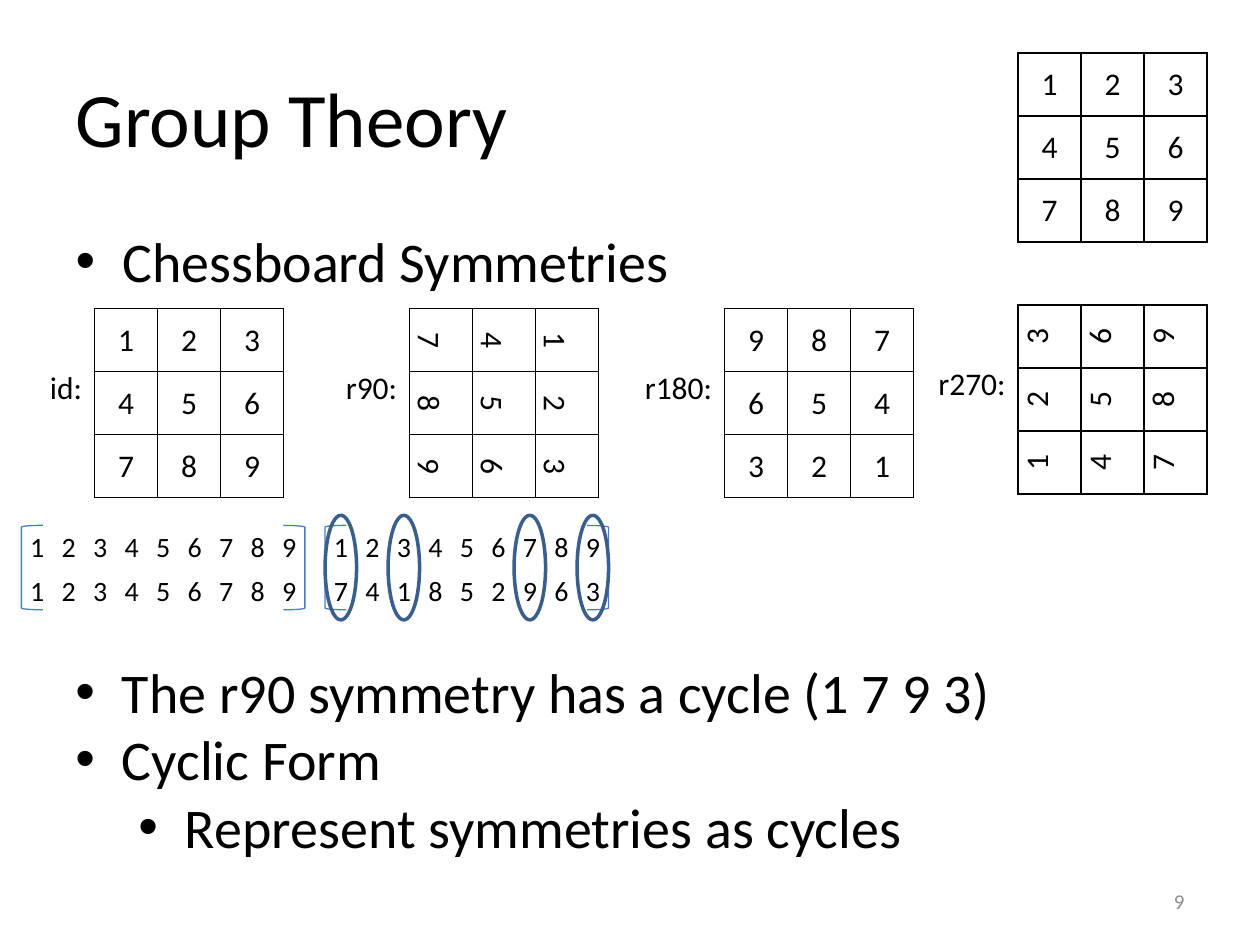
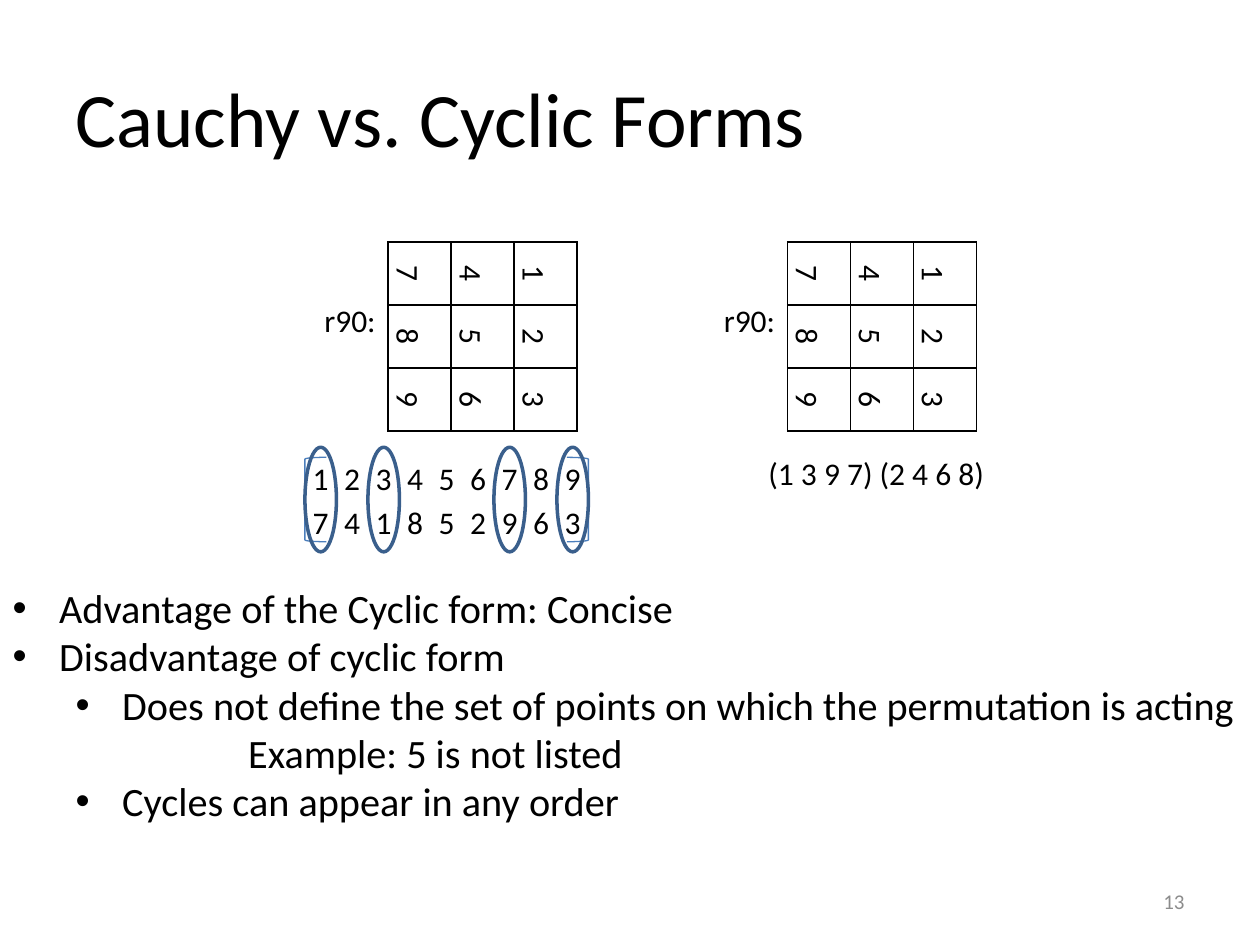
from lxml import etree
from pptx import Presentation
from pptx.dml.color import RGBColor
from pptx.enum.shapes import MSO_SHAPE
from pptx.enum.text import MSO_ANCHOR, MSO_AUTO_SIZE, PP_ALIGN
from pptx.oxml.ns import qn
from pptx.util import Inches, Pt

LEFT, CENTER, RIGHT = PP_ALIGN.LEFT, PP_ALIGN.CENTER, PP_ALIGN.RIGHT
MIDDLE = MSO_ANCHOR.MIDDLE
NO_AUTOFIT = MSO_AUTO_SIZE.NONE
OVAL = MSO_SHAPE.OVAL
LEFT_BRACKET, RIGHT_BRACKET = MSO_SHAPE.LEFT_BRACKET, MSO_SHAPE.RIGHT_BRACKET

FONT = "Calibri"
BLACK, GREY = "000000", "8C8C8C"
BRACKET_BLUE, CYCLE_BLUE = "4B7EBC", "3A5F8C"

TITLE_AND_CONTENT = 1
BOARD_SIZE = 1.5
LABEL_WIDTH = 1.42
COLUMN_WIDTH, ROW_HEIGHT = 0.25, 0.35
BRACKET_WIDTH, BRACKET_HEIGHT = 0.17, 0.67
CYCLE_OVERHANG = 0.08
HANGING, LEVEL_STEP = 0.37, 0.5
NOTE_INDENT = 1.87

IDENTITY = [(1, 2, 3), (4, 5, 6), (7, 8, 9)]
R90_CYCLE = (1, 7, 9, 3)


def rgb(value):
    return RGBColor.from_string(value)


def rotated(board):
    """Turn a board by 90 degrees clockwise."""
    return list(zip(*reversed(board)))


R90 = rotated(IDENTITY)
R180 = rotated(R90)
R270 = rotated(R180)


def flat(board):
    return [number for row in board for number in row]


def inches(*lengths):
    return [Inches(length) for length in lengths]


def write(paragraph, text, size, color=BLACK, align=LEFT):
    paragraph.alignment = align
    run = paragraph.add_run()
    run.text = str(text)
    for attribute, value in {"name": FONT, "size": Pt(size)}.items():
        setattr(run.font, attribute, value)
    run.font.color.rgb = rgb(color)


def add_text(slide, text, box, size=18, color=BLACK, align=RIGHT, anchor=None):
    frame = slide.shapes.add_textbox(*inches(*box)).text_frame
    frame.word_wrap = True
    frame.vertical_anchor = anchor
    write(frame.paragraphs[0], text, size, color, align)


def add_slide(deck, title, number):
    slide = deck.slides.add_slide(deck.slide_layouts[TITLE_AND_CONTENT])
    heading = slide.shapes.title.text_frame
    heading.vertical_anchor = MIDDLE
    write(heading.paragraphs[0], title, 44)
    add_text(slide, number, (7.17, 6.95, 2.33, 0.4), 12, GREY, anchor=MIDDLE)
    return slide


def indent(paragraph, margin, first_line, bullet):
    properties = paragraph._p.get_or_add_pPr()
    properties.set("marL", str(Inches(margin)))
    properties.set("indent", str(Inches(first_line)))
    if bullet:
        etree.SubElement(properties, qn("a:buFont"), typeface="Arial")
        etree.SubElement(properties, qn("a:buChar"), char="•")
    else:
        etree.SubElement(properties, qn("a:buNone"))


def fill_list(frame, items, size, space_before=0):
    """Write (level, text) items; level None is an indented note without bullet."""
    frame.word_wrap = True
    frame.auto_size = NO_AUTOFIT
    for index, (level, text) in enumerate(items):
        paragraph = frame.add_paragraph() if index else frame.paragraphs[0]
        paragraph.space_before = Pt(space_before)
        if level is None:
            paragraph.level = 1
            indent(paragraph, NOTE_INDENT, 0, bullet=False)
        else:
            paragraph.level = level
            indent(paragraph, HANGING + level * LEVEL_STEP, -HANGING, bullet=True)
        write(paragraph, text, size)


def set_borders(cell, color):
    """Draw all four borders, or none of them if color is None."""
    properties = cell._tc.get_or_add_tcPr()
    for position, side in enumerate(("lnL", "lnR", "lnT", "lnB")):
        line = etree.Element(qn(f"a:{side}"), w=str(Pt(1)))
        properties.insert(position, line)
        if color:
            fill = etree.SubElement(line, qn("a:solidFill"))
            etree.SubElement(fill, qn("a:srgbClr"), val=color)
        else:
            etree.SubElement(line, qn("a:noFill"))


def add_number_table(slide, rows, box, size, border=None, direction=None):
    table = slide.shapes.add_table(len(rows), len(rows[0]), *inches(*box)).table
    table.first_row = table.horz_banding = False
    cell_format = {"vertical_anchor": MIDDLE, "margin_left": 0, "margin_right": 0,
                   "margin_top": 0, "margin_bottom": 0}
    for cell, number in zip(table.iter_cells(), flat(rows)):
        for attribute, value in cell_format.items():
            setattr(cell, attribute, value)
        cell.fill.background()
        set_borders(cell, border)
        if direction:
            cell._tc.get_or_add_tcPr().set("vert", direction)
        write(cell.text_frame.paragraphs[0], number, size, align=CENTER)


def add_board(slide, board, left, top, label=None, direction=None):
    add_number_table(slide, board, (left, top, BOARD_SIZE, BOARD_SIZE), 18,
                     BLACK, direction)
    if label:
        width = min(LABEL_WIDTH, left)
        add_text(slide, label, (left - width, top + 0.42, width, 0.4))


def add_outline(slide, kind, box, color, weight):
    outline = slide.shapes.add_shape(kind, *inches(*box))
    outline.shadow.inherit = False
    outline.fill.background()
    outline.line.color.rgb = rgb(color)
    outline.line.width = Pt(weight)


def add_cauchy_form(slide, board, left, top, size, cycle=()):
    """Show a permutation as two bracketed rows and ring the members of a cycle."""
    rows = [flat(IDENTITY), flat(board)]
    width = COLUMN_WIDTH * len(rows[0])
    add_number_table(slide, rows, (left, top, width, 2 * ROW_HEIGHT), size)
    for kind, x in ((LEFT_BRACKET, left),
                    (RIGHT_BRACKET, left + width - BRACKET_WIDTH)):
        add_outline(slide, kind, (x, top, BRACKET_WIDTH, BRACKET_HEIGHT),
                    BRACKET_BLUE, 0.75)
    for number in cycle:
        x = left + (number - 1) * COLUMN_WIDTH
        ring = (x, top - CYCLE_OVERHANG, COLUMN_WIDTH,
                BRACKET_HEIGHT + 2 * CYCLE_OVERHANG)
        add_outline(slide, OVAL, ring, CYCLE_BLUE, 2)


def build_group_theory(deck):
    slide = add_slide(deck, "Group Theory", 9)
    fill_list(slide.placeholders[1].text_frame, [(0, "Chessboard Symmetries")],
              32, space_before=6.4)
    add_board(slide, IDENTITY, 8.08, 0.42)
    for label, board, left, top, direction in (
            ("id:", IDENTITY, 0.75, 2.45, None),
            ("r90:", R90, 3.25, 2.45, "vert"),
            ("r180:", R180, 5.75, 2.45, None),
            ("r270:", R270, 8.08, 2.42, "vert270")):
        add_board(slide, board, left, top, label, direction)
    add_cauchy_form(slide, IDENTITY, 0.17, 4.17, 16)
    add_cauchy_form(slide, R90, 2.58, 4.17, 16, R90_CYCLE)
    conclusions = slide.shapes.add_textbox(*inches(0.5, 5.17, 9.17, 1.72))
    fill_list(conclusions.text_frame, [
        (0, "The r90 symmetry has a cycle (1 7 9 3)"),
        (0, "Cyclic Form"),
        (1, "Represent symmetries as cycles"),
    ], 32)


def build_form_comparison(deck):
    slide = add_slide(deck, "Cauchy vs. Cyclic Forms", 13)
    comparison = slide.placeholders[1]
    for attribute, value in zip(("left", "top", "width", "height"),
                                inches(0, 4.58, 10, 2.04)):
        setattr(comparison, attribute, value)
    fill_list(comparison.text_frame, [
        (0, "Advantage of the Cyclic form: Concise"),
        (0, "Disadvantage of cyclic form"),
        (1, "Does not define the set of points on which the permutation is acting"),
        (None, "Example: 5 is not listed"),
        (1, "Cycles can appear in any order"),
    ], 23)
    for left in (3.08, 6.25):
        add_board(slide, R90, left, 1.92, "r90:", "vert")
    add_cauchy_form(slide, R90, 2.42, 3.63, 18, R90_CYCLE)
    add_text(slide, "(1 3 9 7) (2 4 6 8)", (5.83, 3.55, 2.25, 0.42), align=CENTER)


def main():
    deck = Presentation()
    deck.slide_width, deck.slide_height = inches(10, 7.5)
    build_group_theory(deck)
    build_form_comparison(deck)
    deck.save("out.pptx")


if __name__ == "__main__":
    main()
